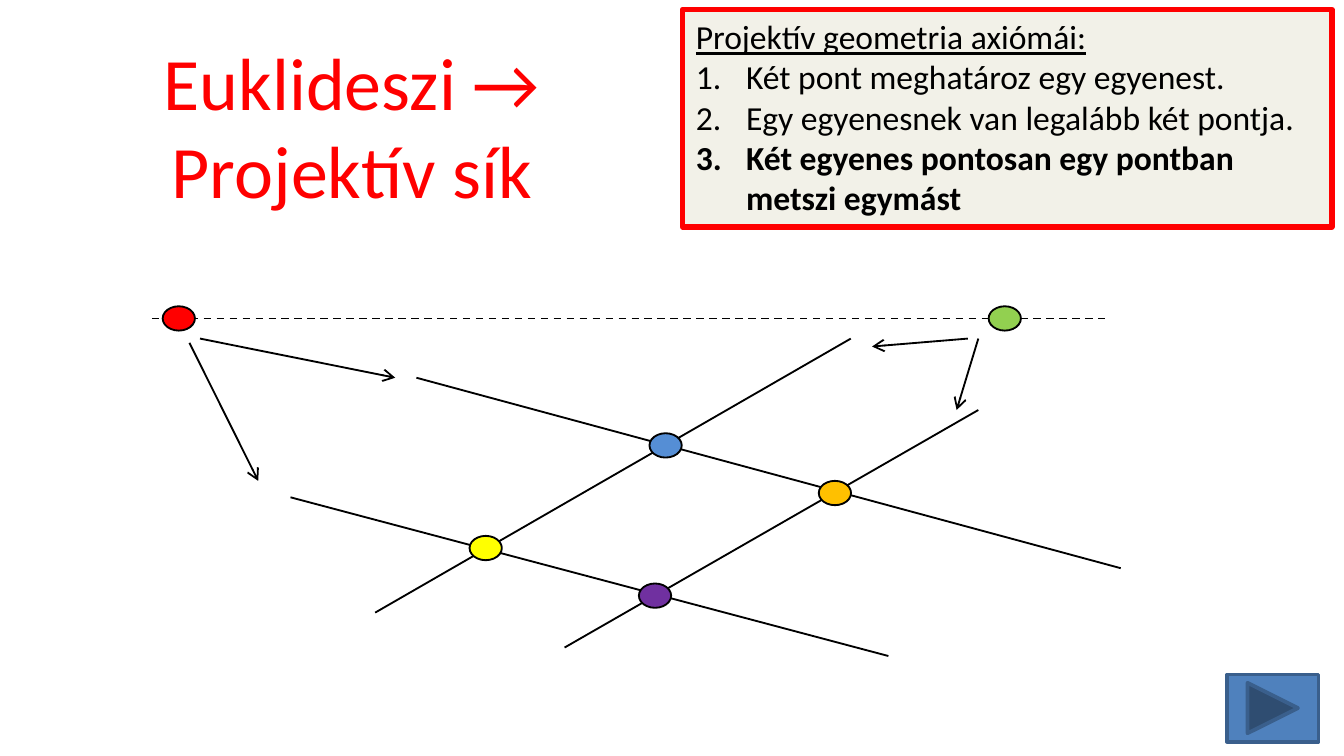
from pptx import Presentation
from pptx import util as u
from pptx.dml import color
from pptx.enum import dml, shapes, text
from pptx.oxml import ns, xmlchemy

Cm, Pt, rgb = u.Cm, u.Pt, color.RGBColor.from_string

theme = {
    "font": "Calibri", "title_size": 39.6, "body_size": 18,
    "black": "000000", "red": "FF0000", "box": "F2F1E8",
    "button": "4F81BD", "button_edge": "3A5F8C",
    "blue": "558ED5", "orange": "FFC000", "yellow": "FFFF00",
    "purple": "7030A0", "green": "92D050",
}

presentation = Presentation()
presentation.slide_width, presentation.slide_height = Cm(25.4), Cm(14.29)
slide = presentation.slides.add_slide(presentation.slide_layouts[6])


def add_filled(kind, left, top, width, height, fill, edge, weight):
    shape = slide.shapes.add_shape(kind, Cm(left), Cm(top), Cm(width), Cm(height))
    shape.shadow.inherit = False
    shape.fill.solid()
    shape.fill.fore_color.rgb = rgb(theme[fill])
    shape.line.color.rgb = rgb(theme[edge])
    shape.line.width = Pt(weight)
    return shape


def add_run(paragraph, words, size, tint, **extra):
    run = paragraph.add_run()
    run.text = words
    run.font.color.rgb = rgb(theme[tint])
    values = {"name": theme["font"], "size": Pt(theme[size]), **extra}
    for name, value in values.items():
        setattr(run.font, name, value)


# Title
title = slide.shapes.add_textbox(Cm(0.2), Cm(1.17), Cm(12.9), Cm(2.39))
title_format = {"word_wrap": True, "vertical_anchor": text.MSO_ANCHOR.MIDDLE}
for name, value in title_format.items():
    setattr(title.text_frame, name, value)
paragraph = title.text_frame.paragraphs[0]
paragraph.alignment = text.PP_ALIGN.CENTER
add_run(paragraph, "Euklideszi → Projektív sík", "title_size", "red")

# Horizon, two pairs of lines, and arrows from the points at infinity
connectors = [
    (2.87, 6.02, 20.88, 6.02, "horizon"),
    (7.09, 11.58, 16.08, 6.4, "line"),
    (10.67, 12.24, 18.49, 7.75, "line"),
    (7.87, 7.14, 21.18, 10.74, "line"),
    (5.49, 9.4, 16.79, 12.4, "line"),
    (18.29, 6.4, 16.48, 6.55, "arrow"),
    (18.49, 6.4, 18.08, 7.75, "arrow"),
    (3.58, 6.48, 4.88, 9.09, "arrow"),
    (3.78, 6.4, 7.47, 7.14, "arrow"),
]
for *ends, role in connectors:
    connector = slide.shapes.add_connector(
        shapes.MSO_CONNECTOR.STRAIGHT, *(Cm(end) for end in ends))
    connector.line.color.rgb = rgb(theme["black"])
    connector.line.width = Pt(1)
    if role == "horizon":
        connector.line.dash_style = dml.MSO_LINE.DASH
    if role == "arrow":
        tail = xmlchemy.OxmlElement("a:tailEnd")
        tail.set("type", "arrow")
        connector.line._get_or_add_ln().append(tail)
    properties = connector._element.find(ns.qn("p:spPr"))
    properties.append(xmlchemy.OxmlElement("a:effectLst"))

# Points, placed by their centres
point_width, point_height = 0.61, 0.46
points = [
    (15.78, 9.32, "orange"), (12.58, 8.42, "blue"), (9.18, 10.36, "yellow"),
    (12.38, 11.26, "purple"), (18.99, 6.02, "green"), (3.38, 6.02, "red"),
]
for x, y, tint in points:
    add_filled(shapes.MSO_SHAPE.OVAL, x - point_width / 2, y - point_height / 2,
               point_width, point_height, tint, "black", 1)

# Forward button
add_filled(shapes.MSO_SHAPE.ACTION_BUTTON_FORWARD_OR_NEXT,
           23.19, 12.75, 1.73, 1.27, "button", "button_edge", 2)

# Axioms
box = add_filled(shapes.MSO_SHAPE.RECTANGLE, 12.9, 0.18, 12.27, 4.11, "box", "red", 3)
frame = box.text_frame
box_format = {"word_wrap": True, "vertical_anchor": text.MSO_ANCHOR.TOP,
              "auto_size": text.MSO_AUTO_SIZE.SHAPE_TO_FIT_TEXT}
for name, value in box_format.items():
    setattr(frame, name, value)
frame.paragraphs[0].alignment = text.PP_ALIGN.LEFT
add_run(frame.paragraphs[0], "Projektív geometria axiómái:", "body_size", "black",
        underline=True)

axioms = [
    ("Két pont meghatároz egy egyenest.", False),
    ("Egy egyenesnek van legalább két pontja.", False),
    ("Két egyenes pontosan egy pontban metszi egymást", True),
]
for words, bold in axioms:
    paragraph = frame.add_paragraph()
    paragraph.alignment = text.PP_ALIGN.LEFT
    properties = paragraph._p.get_or_add_pPr()
    for name, value in {"marL": Cm(0.95), "indent": -Cm(0.95)}.items():
        properties.set(name, str(value))
    number = xmlchemy.OxmlElement("a:buAutoNum")
    number.set("type", "arabicPeriod")
    properties.append(number)
    add_run(paragraph, words, "body_size", "black", bold=bold)

presentation.save("out.pptx")
